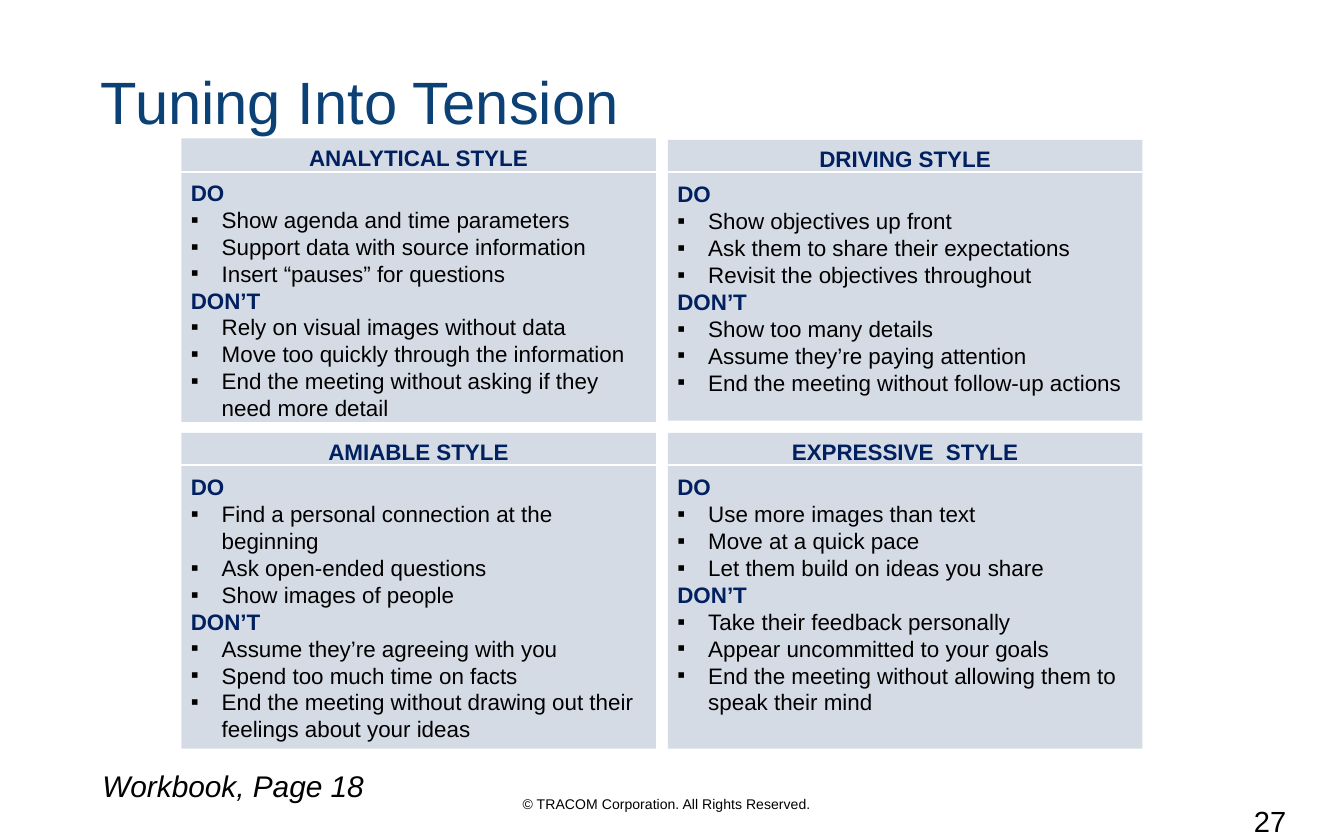
import pptx
import pptx.util
from pptx.dml.color import RGBColor
from pptx.enum.shapes import MSO_CONNECTOR, MSO_SHAPE
from pptx.enum.text import MSO_ANCHOR, PP_ALIGN
from pptx.oxml.ns import qn
from lxml import etree

Inches, Pt = pptx.util.Inches, pptx.util.Pt

# Content: heading, dos, don'ts, then column, top, height and divider position
TITLE = "Tuning Into Tension"
STYLES = [
    ("ANALYTICAL STYLE",
     ["Show agenda and time parameters",
      "Support data with source information",
      "Insert “pauses” for questions"],
     ["Rely on visual images without data",
      "Move too quickly through the information",
      "End the meeting without asking if they need more detail"],
     (0, 1.03, 2.11, 1.28)),
    ("DRIVING STYLE",
     ["Show objectives up front",
      "Ask them to share their expectations",
      "Revisit the objectives throughout"],
     ["Show too many details",
      "Assume they’re paying attention",
      "End the meeting without follow-up actions"],
     (1, 1.04, 2.09, 1.28)),
    ("AMIABLE STYLE",
     ["Find a personal connection at the beginning",
      "Ask open-ended questions",
      "Show images of people"],
     ["Assume they’re agreeing with you",
      "Spend too much time on facts",
      "End the meeting without drawing out their feelings about your ideas"],
     (0, 3.22, 2.35, 3.46)),
    ("EXPRESSIVE  STYLE",
     ["Use more images than text",
      "Move at a quick pace",
      "Let them build on ideas you share"],
     ["Take their feedback personally",
      "Appear uncommitted to your goals",
      "End the meeting without allowing them to speak their mind"],
     (1, 3.22, 2.35, 3.46)),
]
# Text, box, format
NOTES = [
    ("© TRACOM Corporation. All Rights Reserved.", (3.26, 5.87, 3.4, 0.23), {"size": 7.5}),
    ("27", (9.07, 5.93, 0.76, 0.33), {"size": 15.6}),
    ("Workbook, Page 18", (0.61, 5.66, 2.25, 0.37), {"size": 16, "italic": True}),
]
NAVY, BLACK, PANEL, WHITE, TITLE_BLUE = "002060", "000000", "D5DBE5", "FFFFFF", "0C4176"
PANEL_LEFT, PANEL_WIDTH, PANEL_GAP = 1.35, 3.53, 0.09
BULLET_INDENT = 0.23


def color(hex_value):
    return RGBColor.from_string(hex_value)


def set_frame(frame, side, top, anchor=MSO_ANCHOR.TOP):
    frame.word_wrap = True
    frame.vertical_anchor = anchor
    frame.margin_left = frame.margin_right = Inches(side)
    frame.margin_top = frame.margin_bottom = Inches(top)


def write(frame, text, size=12, ink=BLACK, bold=False, italic=False,
          align=PP_ALIGN.LEFT, after=0, bullet=None):
    """Fill the empty first paragraph, or add one after it."""
    first = frame.paragraphs[0]
    paragraph = frame.add_paragraph() if first.runs else first
    paragraph.alignment = align
    paragraph.space_before, paragraph.space_after = Pt(0), Pt(after)
    if bullet:
        properties = paragraph._p.get_or_add_pPr()
        properties.set("marL", str(Inches(BULLET_INDENT)))
        properties.set("indent", str(-Inches(BULLET_INDENT)))
        etree.SubElement(properties, qn("a:buFont")).set("typeface", "Arial")
        etree.SubElement(properties, qn("a:buChar")).set("char", bullet)
    run = paragraph.add_run()
    run.text = text
    font = run.font
    font.name, font.size, font.bold, font.italic = "Arial", Pt(size), bold, italic
    font.color.rgb = color(ink)


def add_panel(slide, heading, dos, donts, place):
    column, top, height, divider_y = place
    left = PANEL_LEFT + column * (PANEL_WIDTH + PANEL_GAP)
    panel = slide.shapes.add_shape(MSO_SHAPE.RECTANGLE, Inches(left), Inches(top),
                                   Inches(PANEL_WIDTH), Inches(height))
    panel.shadow.inherit = False
    panel.fill.solid()
    panel.fill.fore_color.rgb = color(PANEL)
    panel.line.fill.background()
    frame = panel.text_frame
    set_frame(frame, 0.07, 0.04)
    write(frame, heading, ink=NAVY, bold=True, align=PP_ALIGN.CENTER, after=4.5)
    for label, tips in (("DO", dos), ("DON’T", donts)):
        write(frame, label, ink=NAVY, bold=True)
        for tip in tips:
            write(frame, tip, bullet="▪")

    divider = slide.shapes.add_connector(
        MSO_CONNECTOR.STRAIGHT, Inches(left), Inches(divider_y),
        Inches(left + PANEL_WIDTH), Inches(divider_y))
    divider.line.color.rgb = color(WHITE)
    divider.line.width = Pt(1)
    etree.SubElement(divider._element.spPr, qn("a:effectLst"))


def main():
    deck = pptx.Presentation()
    deck.slide_width, deck.slide_height = Inches(10), Inches(6.25)
    slide = deck.slides.add_slide(deck.slide_layouts[5])

    # Title
    title = slide.shapes.title
    title.left, title.top, title.width, title.height = map(Inches, (0.65, 0.39, 6.21, 0.72))
    set_frame(title.text_frame, 0.1, 0.05, MSO_ANCHOR.MIDDLE)
    write(title.text_frame, TITLE, size=32, ink=TITLE_BLUE)

    # Four style panels
    for style in STYLES:
        add_panel(slide, *style)

    # Copyright, page number and workbook reference
    for text, box, text_format in NOTES:
        note = slide.shapes.add_textbox(*map(Inches, box))
        set_frame(note.text_frame, 0.1, 0.05)
        write(note.text_frame, text, align=PP_ALIGN.CENTER, **text_format)

    deck.save("out.pptx")


if __name__ == "__main__":
    main()
